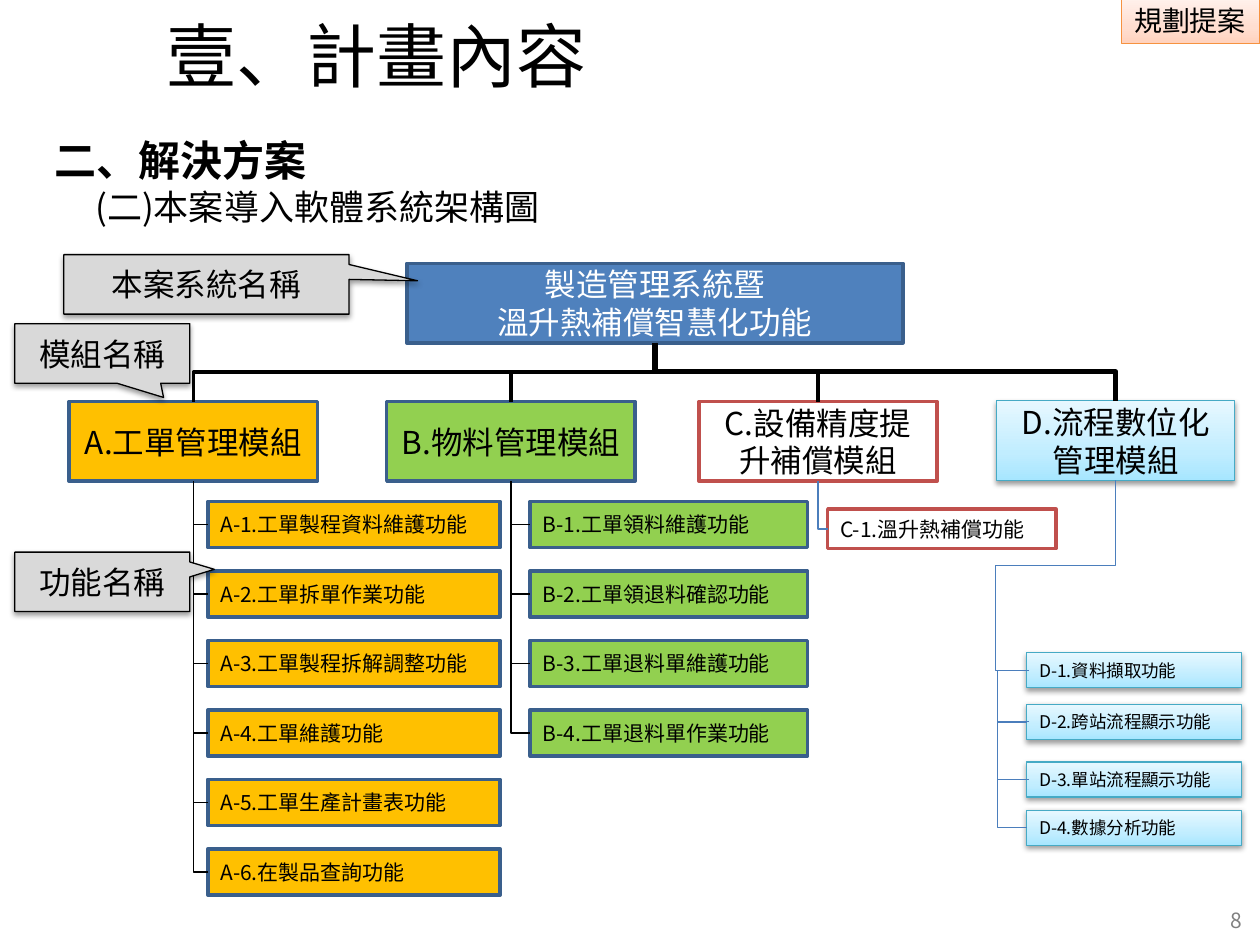
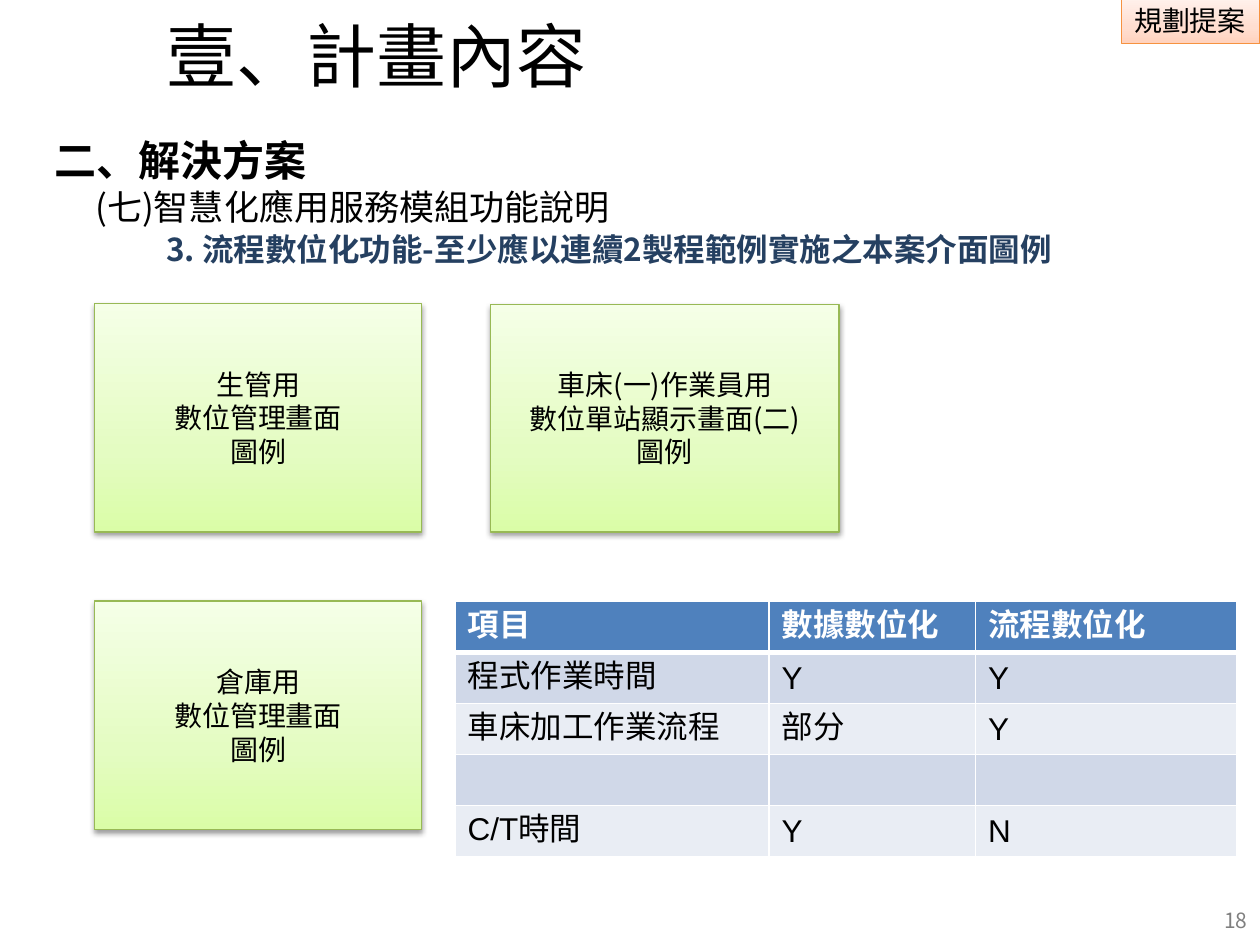
from dataclasses import dataclass

import lxml.etree
import pptx
import pptx.dml.color
import pptx.enum.shapes
import pptx.enum.text
import pptx.oxml.ns
import pptx.util

Pt = pptx.util.Pt
qn = pptx.oxml.ns.qn
SHAPE = pptx.enum.shapes.MSO_SHAPE
ALIGN = pptx.enum.text.PP_ALIGN
ANCHOR = pptx.enum.text.MSO_ANCHOR
BOTTOM, LEFT, TOP = 2, 1, 0


@dataclass(frozen=True)
class Theme:
    font: str = "Noto Sans CJK SC"
    table_font: str = "Arial"
    black: str = "000000"
    white: str = "FFFFFF"
    gray: str = "7F7F7F"
    navy: str = "254061"
    blue: str = "4F81BD"
    blue_edge: str = "3A5F8C"
    blue_line: str = "4B7EBC"
    amber: str = "FFC000"
    green: str = "92D050"
    red: str = "C0504D"
    callout: str = "D9D9D9"
    bands: tuple = ("E9EDF4", "D0D8E8")
    # Gradients run from bottom to top
    peach: tuple = ("FFD2BD", "FFDED0", "FFF2ED")
    peach_edge: str = "F69240"
    sky: tuple = ("A7E6FF", "C1EDFF", "E7F8FF")
    sky_edge: str = "46AAC5"
    lime: tuple = ("DAFDA7", "E4FCC2", "F5FFE7")
    lime_edge: str = "98B955"
    title: int = 40
    heading: int = 24
    subheading: int = 20
    body: int = 18
    panel: int = 16
    small: int = 12
    tiny: int = 10
    leading: float = 1.2
    hairline: float = 0.75


THEME = Theme()


# Helpers
def rgb(value):
    return pptx.dml.color.RGBColor.from_string(value)


def points(box):
    return [Pt(length) for length in box]


def add_xml(parent, tag, **attributes):
    return lxml.etree.SubElement(parent, qn(tag), attributes)


def write_text(frame, text, size=THEME.body, color=THEME.black, bold=False,
               align=ALIGN.LEFT, anchor=ANCHOR.MIDDLE, font=THEME.font,
               indent=0, leading=None, wrap=True, append=False):
    frame.word_wrap = wrap
    frame.vertical_anchor = anchor
    for index, line in enumerate(text.split("\n")):
        paragraph = frame.add_paragraph() if append or index else frame.paragraphs[0]
        paragraph.alignment = align
        paragraph.line_spacing = Pt(leading or round(size * THEME.leading, 1))
        paragraph.space_before = Pt(0)
        if indent:
            properties = paragraph._p.get_or_add_pPr()
            properties.set("marL", str(Pt(indent)))
            properties.set("indent", "0")
        run = paragraph.add_run()
        run.text = line
        run.font.name, run.font.size, run.font.bold = font, Pt(size), bold
        run.font.color.rgb = rgb(color)
        add_xml(run._r.rPr, "a:ea", typeface=THEME.font)


def add_text(slide, box, text, **style):
    frame = slide.shapes.add_textbox(*points(box)).text_frame
    write_text(frame, text, **style)
    return frame


def add_box(slide, box, text, fill, edge, weight=2, shadow=False,
            preset=SHAPE.RECTANGLE, **style):
    shape = slide.shapes.add_shape(preset, *points(box))
    if isinstance(fill, tuple):
        shape.fill.gradient()
        shape.fill.gradient_angle = 90
        stops = shape._element.spPr.find(".//" + qn("a:gsLst"))
        stops.clear()
        for position, color in zip((0, 35000, 100000), fill):
            add_xml(add_xml(stops, "a:gs", pos=str(position)), "a:srgbClr", val=color)
    else:
        shape.fill.solid()
        shape.fill.fore_color.rgb = rgb(fill)
    shape.line.color.rgb = rgb(edge)
    shape.line.width = Pt(weight)
    shape.shadow.inherit = False
    if shadow:
        effects = shape._element.spPr.find(qn("a:effectLst"))
        outer = add_xml(effects, "a:outerShdw", blurRad=str(Pt(3.1)),
                        dist=str(Pt(1.6)), dir="5400000", rotWithShape="0")
        add_xml(add_xml(outer, "a:srgbClr", val=THEME.black), "a:alpha", val="38000")
    write_text(shape.text_frame, text, **style)
    return shape


def add_elbow(slide, parent, child, color, weight, sites, preset="bentConnector3",
              bends=()):
    elbow = slide.shapes.add_connector(
        pptx.enum.shapes.MSO_CONNECTOR.ELBOW, 0, 0, 0, 0)
    elbow.begin_connect(parent, sites[0])
    elbow.end_connect(child, sites[1])
    elbow.line.color.rgb = rgb(color)
    elbow.line.width = Pt(weight)
    properties = elbow._element.spPr
    add_xml(properties, "a:effectLst")
    frame = properties.find(qn("a:xfrm"))
    if sites[0] == BOTTOM:
        # Leave downwards: turn the frame a quarter about its centre
        across, down = elbow.end_x - elbow.begin_x, elbow.end_y - elbow.begin_y
        middle_x = (elbow.begin_x + elbow.end_x) // 2
        middle_y = (elbow.begin_y + elbow.end_y) // 2
        elbow.left, elbow.top = middle_x - down // 2, middle_y - abs(across) // 2
        elbow.width, elbow.height = down, abs(across)
        frame.set("rot", "16200000" if across > 0 else "5400000")
        frame.set("flipH", "1" if across > 0 else "0")
    else:
        # Between two left sides: a thin frame whose bend lies outside it
        elbow.width = Pt(1)
        frame.set("flipH", "1")
    geometry = properties.find(qn("a:prstGeom"))
    geometry.set("prst", preset)
    for number, bend in enumerate(bends, 1):
        add_xml(geometry.find(qn("a:avLst")), "a:gd", name=f"adj{number}",
                fmla=f"val {round(bend * 100000)}")


# Shared frame of a slide
def start_slide(deck, subheading, number, number_left):
    slide = deck.slides.add_slide(deck.slide_layouts[5])
    title = slide.shapes.title
    title.left, title.top, title.width, title.height = points((88, 3.6, 481.5, 49))
    title.text_frame.auto_size = pptx.enum.text.MSO_AUTO_SIZE.NONE
    write_text(title.text_frame, "壹、計畫內容", size=THEME.title, anchor=ANCHOR.TOP)
    add_box(slide, (641, -1.5, 79, 26.5), "規劃提案", THEME.peach, THEME.peach_edge,
            THEME.hairline, size=THEME.panel, anchor=ANCHOR.TOP, wrap=False)
    headings = add_text(slide, (18.5, 73.5, 481.5, 60.5), "二、解決方案", bold=True,
                        size=THEME.heading, indent=5.4, anchor=ANCHOR.TOP)
    write_text(headings, subheading, size=THEME.subheading, indent=28.8,
               anchor=ANCHOR.TOP, append=True)
    add_text(slide, (number_left, 515.5, 54, 23), number, size=THEME.small,
             color=THEME.gray, align=ALIGN.RIGHT, leading=12)
    return slide


# One module with its functions, whose places are relative to the module
def add_module(slide, box, system, name, functions, offset, tops, size, look,
               trunk=2, branch=THEME.black, text_size=THEME.small, chained=False):
    module = add_box(slide, box, name, align=ALIGN.CENTER, **look)
    add_elbow(slide, system, module, THEME.black, trunk, (BOTTOM, TOP))
    previous = None
    for function, top in zip(functions, tops):
        place = (box[0] + offset, box[1] + top, *size)
        item = add_box(slide, place, function, size=text_size, **look)
        if not chained:
            add_elbow(slide, module, item, branch, THEME.hairline, (BOTTOM, LEFT),
                      "bentConnector2")
        elif previous is None:
            add_elbow(slide, module, item, branch, THEME.hairline, (BOTTOM, LEFT),
                      "bentConnector4", (0.45, 1.35))
        else:
            add_elbow(slide, previous, item, branch, THEME.hairline, (LEFT, LEFT),
                      bends=(18,))
        previous = item


def add_architecture(slide):
    system = add_box(slide, (232.5, 150.5, 283.5, 45.5),
                     "製造管理系統暨\n溫升熱補償智慧化功能", THEME.blue,
                     THEME.blue_edge, color=THEME.white, align=ALIGN.CENTER)
    rows = [57 + 39.7 * row for row in range(6)]
    add_module(slide, (39.5, 229.5, 142, 45.5), system, "A.工單管理模組",
               ("A-1.工單製程資料維護功能", "A-2.工單拆單作業功能",
                "A-3.工單製程拆解調整功能", "A-4.工單維護功能",
                "A-5.工單生產計畫表功能", "A-6.在製品查詢功能"),
               79.3, rows, (167, 26.5),
               dict(fill=THEME.amber, edge=THEME.blue_edge))
    add_module(slide, (221, 229.5, 142, 45.5), system, "B.物料管理模組",
               ("B-1.工單領料維護功能", "B-2.工單領退料確認功能",
                "B-3.工單退料單維護功能", "B-4.工單退料單作業功能"),
               82, rows, (158.5, 26.5),
               dict(fill=THEME.green, edge=THEME.blue_edge))
    add_module(slide, (399.5, 229.5, 136, 45.5), system, "C.設備精度提升補償模組",
               ("C-1.溫升熱補償功能",), 73.5, (61.5,), (130.5, 22.5),
               dict(fill=THEME.white, edge=THEME.red), branch=THEME.blue_line)
    add_module(slide, (569.5, 229, 136, 45.5), system, "D.流程數位化管理模組",
               ("D-1.資料擷取功能", "D-2.跨站流程顯示功能",
                "D-3.單站流程顯示功能", "D-4.數據分析功能"),
               17.3, (144, 173.5, 206.5, 234), (122.5, 20),
               dict(fill=THEME.sky, edge=THEME.sky_edge, weight=THEME.hairline,
                    shadow=True),
               trunk=3, branch=THEME.blue_line, text_size=THEME.tiny, chained=True)


def add_callouts(slide):
    for label, box, tip in (
            ("本案系統名稱", (36.5, 145.5, 163, 34), (0.74, -0.06)),
            ("模組名稱", (8.5, 185, 100, 34), (0.35, 0.74)),
            ("功能名稱", (8.5, 315.5, 100, 34), (0.64, -0.21))):
        callout = add_box(slide, box, label, THEME.callout, THEME.black,
                          THEME.hairline, shadow=True, align=ALIGN.CENTER,
                          preset=SHAPE.RECTANGULAR_CALLOUT)
        callout.adjustments[0], callout.adjustments[1] = tip


# Screen examples and the table of digitised items
def add_screens(slide):
    for label, box in (
            ("生管用\n數位管理畫面\n圖例", (54, 173.5, 187, 130.5)),
            ("車床(一)作業員用\n數位單站顯示畫面(二)\n圖例", (280.5, 174, 199, 130)),
            ("倉庫用\n數位管理畫面\n圖例", (54, 343.5, 187, 130.5))):
        add_box(slide, box, label, THEME.lime, THEME.lime_edge, THEME.hairline,
                shadow=True, size=THEME.panel, align=ALIGN.CENTER)


def add_cell_borders(cell, bottom):
    properties = cell._tc.get_or_add_tcPr()
    for side, weight in (("L", 1), ("R", 1), ("T", 1), ("B", bottom)):
        border = add_xml(properties, f"a:ln{side}", w=str(Pt(weight)))
        add_xml(add_xml(border, "a:solidFill"), "a:srgbClr", val=THEME.white)


def add_items_table(slide, box):
    items = (("項目", "數據數位化", "流程數位化"),
             ("程式作業時間", "Y", "Y"),
             ("車床加工作業流程", "部分", "Y"),
             ("", "", ""),
             ("C/T時間", "Y", "N"))
    table = slide.shapes.add_table(len(items), 3, *points(box)).table
    for column, width in zip(table.columns, (179.5, 118, 149)):
        column.width = Pt(width)
    for row, values in enumerate(items):
        header = row == 0
        for column, value in enumerate(values):
            cell = table.cell(row, column)
            add_cell_borders(cell, 3 if header else 1)
            cell.fill.solid()
            cell.fill.fore_color.rgb = rgb(THEME.blue if header
                                           else THEME.bands[row % 2])
            if value:
                write_text(cell.text_frame, value, font=THEME.table_font, bold=header,
                           color=THEME.white if header else THEME.black,
                           anchor=ANCHOR.TOP)


def main():
    deck = pptx.Presentation()
    deck.slide_width, deck.slide_height = Pt(720), Pt(540)

    # System architecture
    slide = start_slide(deck, "(二)本案導入軟體系統架構圖", "8", 663)
    add_architecture(slide)
    add_callouts(slide)

    # Interface examples
    slide = start_slide(deck, "(七)智慧化應用服務模組功能說明", "18", 666)
    add_text(slide, (88, 128, 555, 29),
             "3. 流程數位化功能-至少應以連續2製程範例實施之本案介面圖例",
             color=THEME.navy, bold=True, anchor=ANCHOR.TOP)
    add_screens(slide)
    add_items_table(slide, (260, 343.5, 446.5, 146))

    deck.save("out.pptx")


if __name__ == "__main__":
    main()
